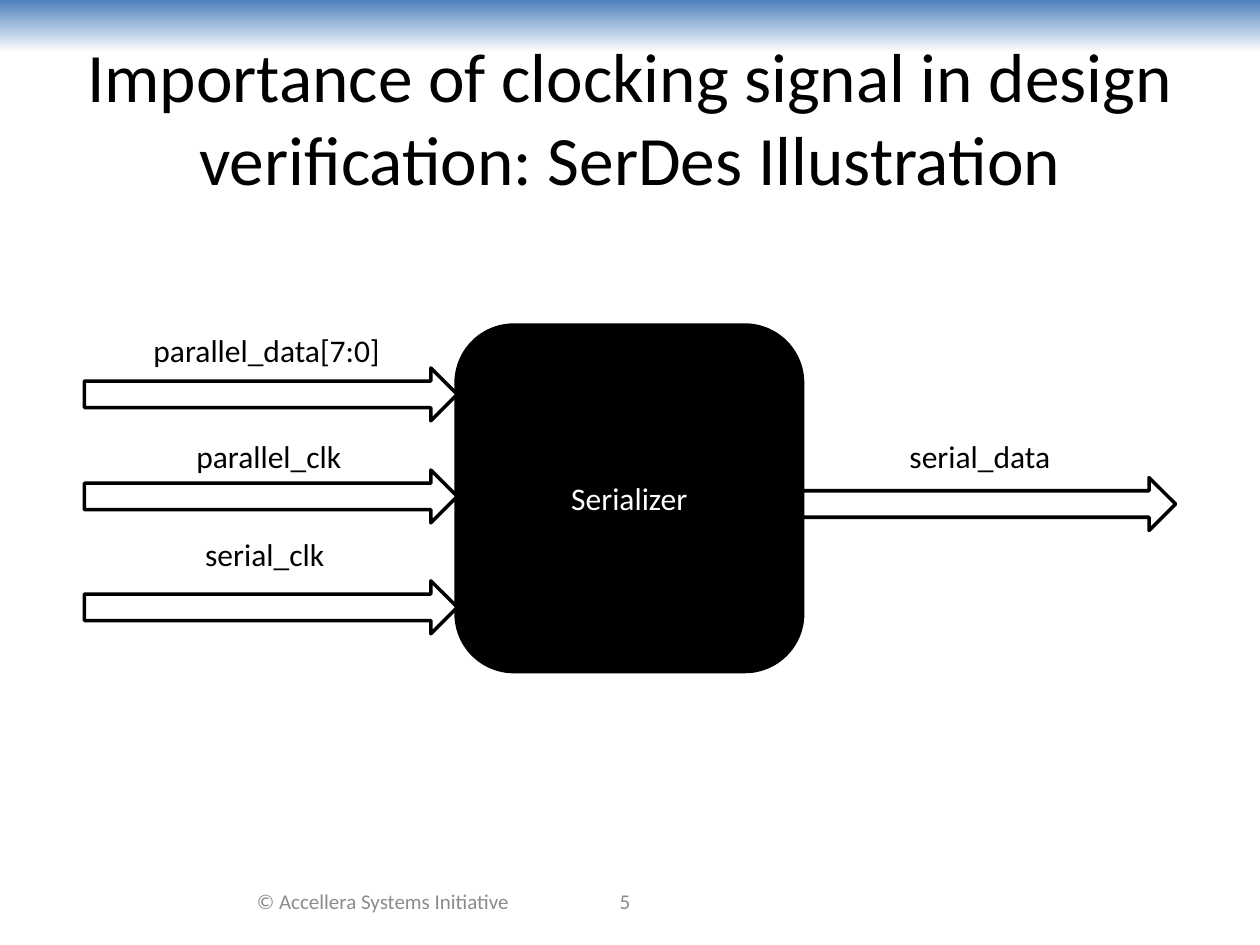
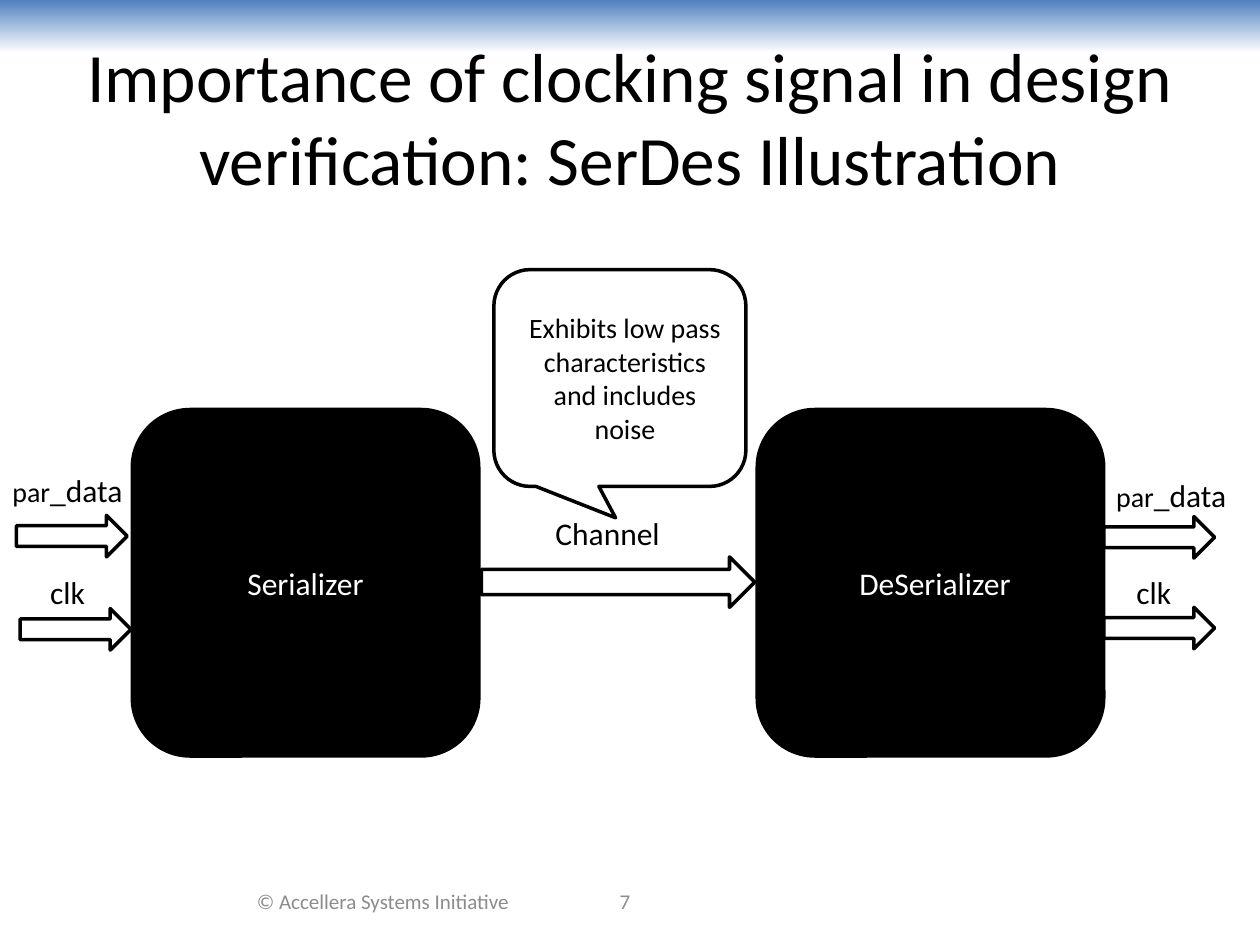
from pptx import Presentation
from pptx.dml.color import RGBColor
from pptx.enum.shapes import MSO_SHAPE
from pptx.enum.text import MSO_ANCHOR, MSO_AUTO_SIZE, PP_ALIGN
from pptx.util import Inches, Pt

HEX = {"ink": "000000", "paper": "FFFFFF", "band": "4F81BD", "foot": "8C8C8C"}
FONT = "Calibri"
TITLE = ("Importance of clocking signal in design verification: "
         "SerDes Illustration")
OWNER = "© Accellera Systems Initiative"

# The slide is a grid of square cells; all boxes are in columns and rows.
CELL = Inches(0.1)
COLS, ROWS = 100, 75
SIDE = 27.5    # side of a block
LINE = 4       # height of a one-line label

RECT = MSO_SHAPE.RECTANGLE
ROUND = MSO_SHAPE.ROUNDED_RECTANGLE
ARROW = MSO_SHAPE.RIGHT_ARROW
BUBBLE = MSO_SHAPE.ROUNDED_RECTANGULAR_CALLOUT
LEFT, CENTER = PP_ALIGN.LEFT, PP_ALIGN.CENTER
MIDDLE, TOP = MSO_ANCHOR.MIDDLE, MSO_ANCHOR.TOP
NO_FIT = MSO_AUTO_SIZE.NONE


def rgb(name):
    return RGBColor.from_string(HEX[name])


def cells(*box):
    return [round(n * CELL) for n in box]


def shift(box, x, y, w, h):
    """Give a w by h box whose corner is x, y away from that of box."""
    return box[0] + x, box[1] + y, w, h


def write(frame, runs, color="ink", align=CENTER, anchor=MIDDLE, wrap=True):
    """Fill a frame with one paragraph of (text, size) runs."""
    frame.auto_size = NO_FIT
    frame.word_wrap = wrap
    frame.vertical_anchor = anchor
    para = frame.paragraphs[0]
    para.alignment = align
    for text, size in runs:
        run = para.add_run()
        run.text = text
        run.font.name = FONT
        run.font.size = Pt(size)
        run.font.color.rgb = rgb(color)


def draw(slide, kind, box, fill="paper"):
    shape = slide.shapes.add_shape(kind, *cells(*box))
    shape.shadow.inherit = False
    if fill:
        shape.fill.solid()
        shape.fill.fore_color.rgb = rgb(fill)
    else:
        shape.fill.background()
    shape.line.color.rgb = rgb("ink")
    shape.line.width = Pt(2)
    return shape


def label(slide, box, runs):
    frame = slide.shapes.add_textbox(*cells(*box)).text_frame
    write(frame, runs, align=LEFT, anchor=TOP, wrap=False)


def block(slide, box, name, nudge=0):
    frame = draw(slide, ROUND, box, "ink").text_frame
    frame.margin_left = Inches(0.1 + nudge)
    write(frame, [(name, 18)], "paper")


def ports(slide, box, size, pins):
    """Add arrows of one size and their labels, placed from a block's corner."""
    for arrow, tag, wide, runs in pins:
        draw(slide, ARROW, shift(box, *arrow, *size))
        label(slide, shift(box, *tag, wide, LINE), runs)


def band(prs, slide):
    """Draw the top band and move it to the back of the slide master."""
    shape = slide.shapes.add_shape(RECT, *cells(0, 0, COLS, 4.2))
    shape.shadow.inherit = False
    shape.line.fill.background()
    shape.fill.gradient()
    shape.fill.gradient_angle = 270
    for stop, name in zip(shape.fill.gradient_stops, ("band", "paper")):
        stop.color.rgb = rgb(name)
    prs.slide_master.shapes.element.insert(2, shape.element)


def page(prs, number):
    """Add a slide with its title and footer."""
    slide = prs.slides.add_slide(prs.slide_layouts[5])
    title = slide.shapes.title
    title.left, title.top, title.width, title.height = cells(5, 3, 90, 12.5)
    write(title.text_frame, [(TITLE, 39.6)])
    for left, wide, text in ((18.3, 24.2, OWNER), (40, 19.2, str(number))):
        foot = slide.shapes.add_textbox(*cells(left, 69.5, wide, LINE))
        write(foot.text_frame, [(text, 12)], "foot")
    return slide


def sender(slide, box):
    """Show one serializer with its three inputs and one output."""
    block(slide, box, "Serializer")
    ports(slide, box, (29.6, 4.2), [
        ((-29.5, 3.4), (-25, 0), 20.4, [("parallel_data[7:0]", 18)]),
        ((-29.5, 11.5), (-21.6, 8.4), 13.8, [("parallel_clk", 18)]),
        ((-29.5, 20.3), (-20.9, 16.2), 13, [("serial_clk", 18)]),
        ((SIDE, 12.1), (35, 8.4), 13.7, [("serial_data", 18)]),
    ])


def channel(slide, box):
    """Show the link between two blocks and the remark on it."""
    draw(slide, ARROW, shift(box, 0, 22.8, 21.7, 4), None)
    label(slide, shift(box, 4.9, 18.9, 10.4, LINE), [("Channel", 18)])
    note = draw(slide, BUBBLE, shift(box, 1, 0, 20, 17.2))
    for spot, value in enumerate((-0.017, 0.645, 0.167)):
        note.adjustments[spot] = value
    frame = note.text_frame
    frame.margin_left, frame.margin_right = Inches(0.14), Inches(0.06)
    write(frame, [("Exhibits low pass characteristics and includes noise", 16)])


def link(slide, box):
    """Show a serializer and a deserializer at the two ends of box."""
    left, top, wide, _ = box
    near = left, top, SIDE, SIDE
    far = left + wide - SIDE, top, SIDE, SIDE
    size = 8.8, 3.3
    data, clock = [("par", 16), ("_data", 18)], [("clk", 18)]
    block(slide, near, "Serializer")
    block(slide, far, "DeSerializer", 0.07)
    ports(slide, near, size, [
        ((-9.2, 8.4), (-10.5, 4.4), 10.8, data),
        ((-8.9, 15.8), (-7.5, 12.5), 5.4, clock),
    ])
    ports(slide, far, size, [
        ((SIDE, 8.5), (SIDE, 4.8), 10.8, data),
        ((SIDE, 15.7), (29.1, 12.5), 5.4, clock),
    ])
    channel(slide, shift(near, SIDE + 0.2, -11.1, 21.7, 26.8))


def main():
    prs = Presentation()
    prs.slide_width, prs.slide_height = cells(COLS, ROWS)
    first = page(prs, 5)
    band(prs, first)
    sender(first, (36.2, 25.8, SIDE, SIDE))
    link(page(prs, 7), (10.5, 32.5, 77.1, SIDE))
    prs.save("out.pptx")


if __name__ == "__main__":
    main()
